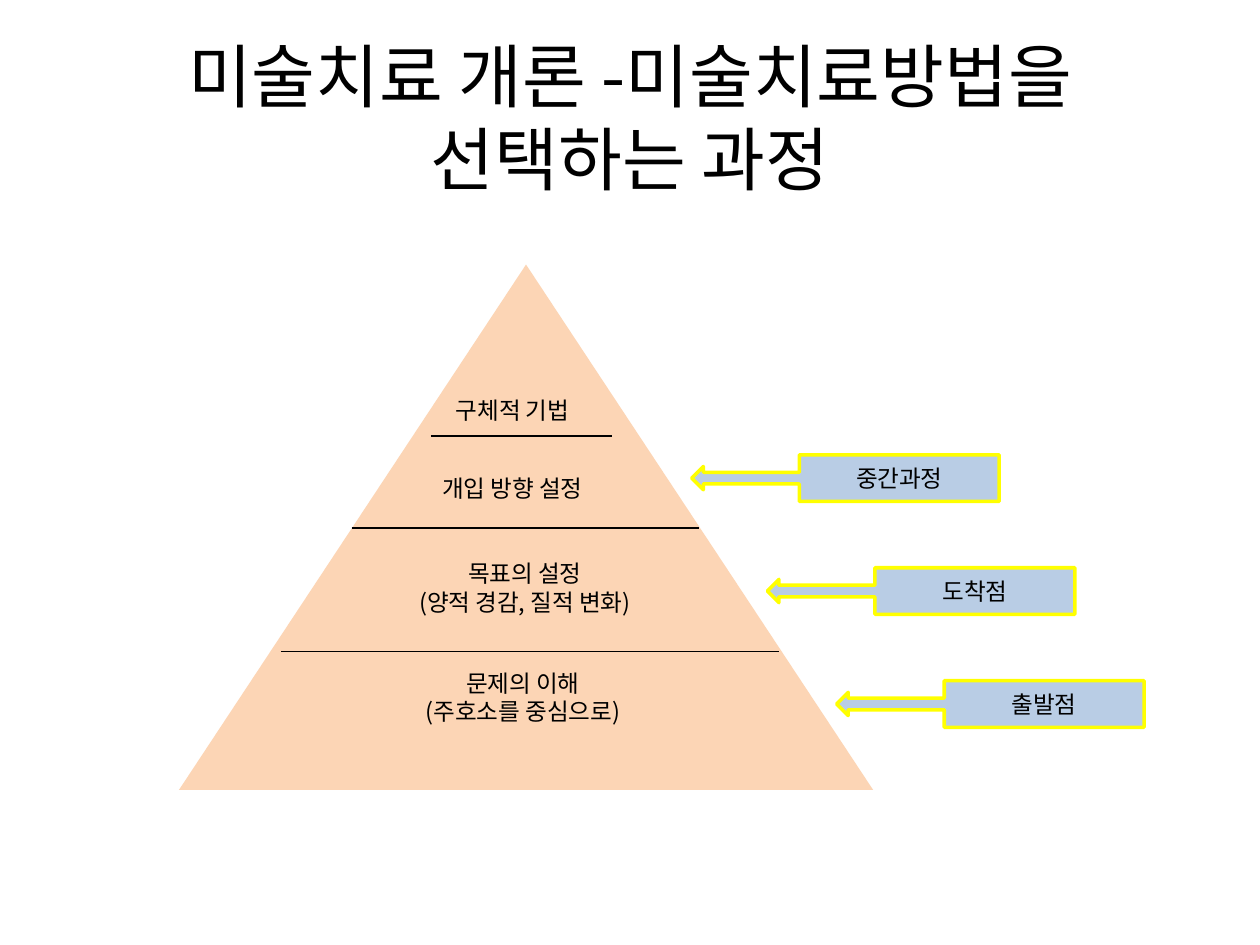
from lxml import etree
from pptx import Presentation
from pptx.dml.color import RGBColor
from pptx.enum import shapes, text
from pptx.oxml.ns import qn
from pptx.util import Inches, Pt

WIDTH, HEIGHT = Inches(10), Inches(7.5)
FONT = "Noto Sans CJK KR"
COLORS = {"text": "000000", "pyramid": "FCD5B5", "callout": "B9CDE5", "outline": "FFFF00"}


def color(name):
    return RGBColor.from_string(COLORS[name])


def across(percent):
    return round(WIDTH * percent / 100)


def down(percent):
    return round(HEIGHT * percent / 100)


def box(left, top, width, height):
    """Turn shares of the slide, in percent, into a position and size."""
    return across(left), down(top), across(width), down(height)


def write(frame, lines, size, align=text.PP_ALIGN.CENTER):
    frame.text = "\n".join(lines)
    for paragraph in frame.paragraphs:
        paragraph.alignment = align
        font = paragraph.font
        font.size, font.name = Pt(size), FONT
        font.color.rgb = color("text")
        # Korean letters take the East Asian typeface
        properties = paragraph._p.pPr.find(qn("a:defRPr"))
        etree.SubElement(properties, qn("a:ea"), typeface=FONT)


def set_title(slide, line):
    title = slide.shapes.title
    title.left, title.top, title.width, title.height = box(5, 4, 90, 16.67)
    frame = title.text_frame
    write(frame, [line], 39.6)
    frame.auto_size = text.MSO_AUTO_SIZE.NONE
    frame.vertical_anchor = text.MSO_ANCHOR.MIDDLE


def add_filled(slide, kind, place, fill):
    shape = slide.shapes.add_shape(kind, *place)
    shape.shadow.inherit = False
    shape.fill.solid()
    shape.fill.fore_color.rgb = color(fill)
    shape.line.fill.background()
    return shape


def add_divider(slide, left, right, level):
    line = slide.shapes.add_connector(
        shapes.MSO_CONNECTOR.STRAIGHT, across(left), down(level), across(right), down(level))
    line.line.color.rgb = color("text")
    line.line.width = Pt(0.75)
    etree.SubElement(line._element.spPr, qn("a:effectLst"))


def add_callout(slide, left, top, label):
    callout = add_filled(slide, shapes.MSO_SHAPE.LEFT_ARROW_CALLOUT,
                         box(left, top, 24.4, 4.93), "callout")
    callout.line.color.rgb = color("outline")
    callout.line.width = Pt(2)
    callout.text_frame.vertical_anchor = text.MSO_ANCHOR.MIDDLE
    write(callout.text_frame, [label], 13.5)


def add_label(slide, left, top, width, lines):
    height = 4.4 if len(lines) == 1 else 7.47
    frame = slide.shapes.add_textbox(*box(left, top, width, height)).text_frame
    frame.word_wrap = len(lines) > 1
    frame.auto_size = text.MSO_AUTO_SIZE.SHAPE_TO_FIT_TEXT
    align = text.PP_ALIGN.LEFT if len(lines) == 1 else text.PP_ALIGN.CENTER
    write(frame, lines, 13.5, align)


def main():
    presentation = Presentation()
    presentation.slide_width, presentation.slide_height = WIDTH, HEIGHT
    slide = presentation.slides.add_slide(presentation.slide_layouts[5])
    set_title(slide, "미술치료 개론 -미술치료방법을 선택하는 과정")

    # Pyramid and the lines between its levels
    add_filled(slide, shapes.MSO_SHAPE.ISOSCELES_TRIANGLE, box(14.2, 28, 55.1, 55.6), "pyramid")
    for left, right, level in [(27.9, 55.5, 55.87), (34.2, 48.6, 46.13), (22.3, 61.8, 68.93)]:
        add_divider(slide, left, right, level)

    # Stages beside the pyramid, evenly spaced downwards
    stages = [(54.9, "중간과정"), (60.9, "도착점"), (66.4, "출발점")]
    for row, (left, label) in enumerate(stages):
        add_callout(slide, left, 48.13 + row * 11.95, label)

    # Names of the levels, from the top
    add_label(slide, 35.2, 41.2, 12.4, ["구체적 기법"])
    add_label(slide, 34.1, 49.47, 14.9, ["개입 방향 설정"])
    add_label(slide, 30.6, 58.53, 22.1, ["목표의 설정", "(양적 경감, 질적 변화)"])
    add_label(slide, 31.4, 70.13, 20.2, ["문제의 이해", "(주호소를 중심으로)"])

    presentation.save("out.pptx")


if __name__ == "__main__":
    main()
